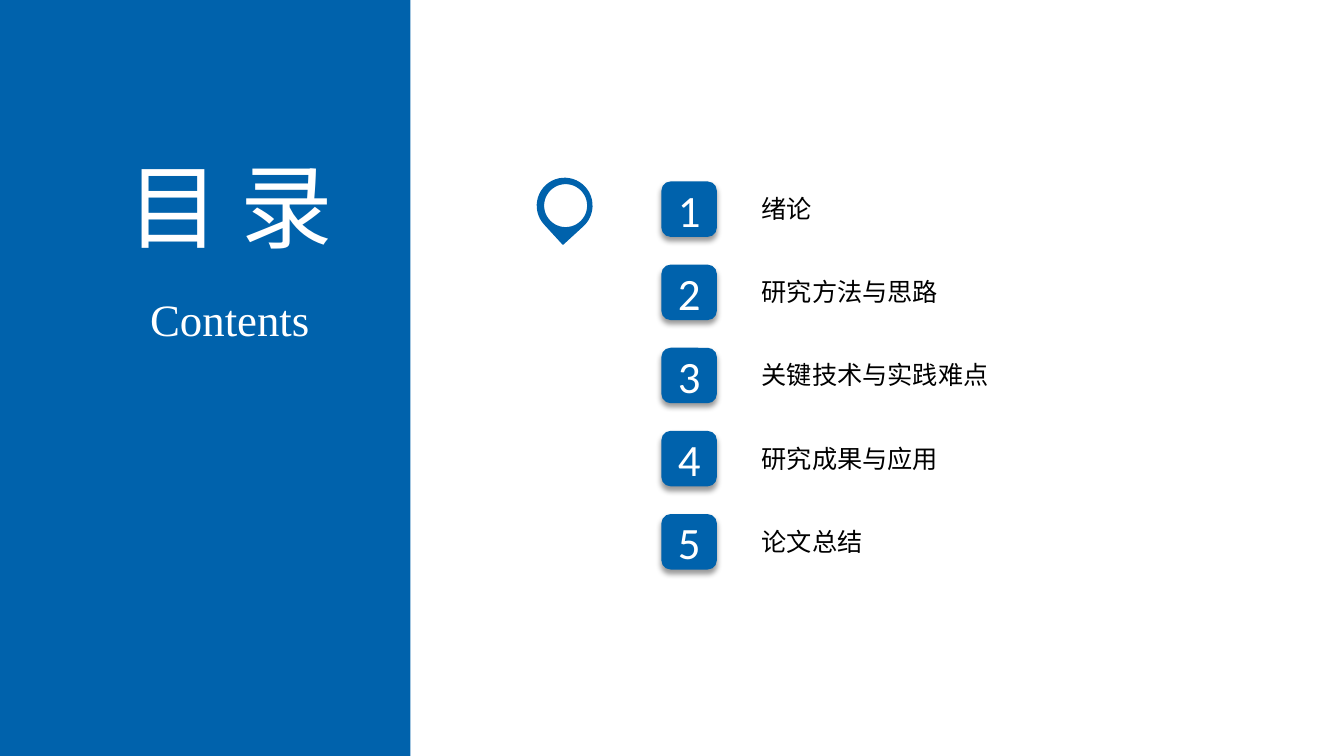
from lxml import etree
from pptx import Presentation
from pptx.dml.color import RGBColor
from pptx.enum.shapes import MSO_SHAPE
from pptx.enum.text import MSO_ANCHOR, MSO_AUTO_SIZE, PP_ALIGN
from pptx.oxml.ns import qn
from pptx.util import Inches, Pt

RECTANGLE = MSO_SHAPE.RECTANGLE
ROUNDED = MSO_SHAPE.ROUNDED_RECTANGLE
TEARDROP = MSO_SHAPE.TEAR
OVAL = MSO_SHAPE.OVAL
CENTER = PP_ALIGN.CENTER
MIDDLE = MSO_ANCHOR.MIDDLE
FIT_SHAPE = MSO_AUTO_SIZE.SHAPE_TO_FIT_TEXT

COLORS = {"blue": "0062AC", "white": "FFFFFF", "black": "000000"}
CHINESE_FONT = "Noto Sans CJK SC"
LATIN_FONT = "Times New Roman"
NUMBER_FONT = "Calibri"
CHAPTERS = ["绪论", "研究方法与思路", "关键技术与实践难点", "研究成果与应用", "论文总结"]


def color(name):
    return RGBColor.from_string(COLORS[name])


def write(text_frame, text, size, font, color_name):
    paragraph = text_frame.paragraphs[0]
    paragraph.alignment = CENTER
    run = paragraph.add_run()
    run.text = text
    run.font.size = Pt(size)
    run.font.name = font
    run.font.color.rgb = color(color_name)
    # East Asian characters take their typeface from a separate element
    etree.SubElement(run.font._element, qn("a:ea"), typeface=font)


def add_label(slide, box, text, size, font, color_name):
    label = slide.shapes.add_textbox(*map(Inches, box))
    label.text_frame.word_wrap = False
    label.text_frame.auto_size = FIT_SHAPE
    write(label.text_frame, text, size, font, color_name)


def add_block(shapes, kind, box, fill, line=None):
    shape = shapes.add_shape(kind, *map(Inches, box))
    shape.shadow.inherit = False
    shape.fill.solid()
    shape.fill.fore_color.rgb = color(fill)
    if line:
        shape.line.color.rgb = color(line)
        shape.line.width = Pt(1)
    else:
        shape.line.fill.background()
    return shape


def add_drop_shadow(shape):
    effects = shape._element.spPr.find(qn("a:effectLst"))
    shadow = etree.SubElement(
        effects, qn("a:outerShdw"), blurRad=str(Pt(4)), dist=str(Pt(3)),
        dir="5400000", algn="t", rotWithShape="0")
    tint = etree.SubElement(shadow, qn("a:srgbClr"), val=COLORS["black"])
    etree.SubElement(tint, qn("a:alpha"), val="40000")


def add_title_panel(slide, left, top, width, height):
    add_block(slide.shapes, RECTANGLE, (left, top, width, height), "blue")
    add_label(slide, (left + 1.02, top + 1.43, 2.52, 1.21),
              "目 录", 66, CHINESE_FONT, "white")
    add_label(slide, (left + 1.38, top + 2.84, 1.8, 0.64),
              "Contents", 32, LATIN_FONT, "white")


def add_chapter_list(slide, left, top, pitch):
    side = 0.55
    for index, chapter in enumerate(CHAPTERS):
        row_top = top + index * pitch
        # Numbered tile
        tile = add_block(slide.shapes, ROUNDED, (left, row_top, side, side), "blue")
        add_drop_shadow(tile)
        tile.text_frame.vertical_anchor = MIDDLE
        write(tile.text_frame, str(index + 1), 32, NUMBER_FONT, "white")
        # Chapter name, one quarter inch per character plus the margins
        label_width = 0.21 + 0.25 * len(chapter)
        add_label(slide, (left + 0.89, row_top + 0.07, label_width, 0.4),
                  chapter, 18, CHINESE_FONT, "black")


def add_marker(slide, left, top, size):
    marker = slide.shapes.add_group_shape()
    pin = add_block(marker.shapes, TEARDROP, (left, top, size, size), "blue", "blue")
    pin.rotation = 137.5
    add_block(marker.shapes, OVAL, (left + 0.06, top + 0.05, size - 0.1, size - 0.1),
              "white", "blue")


def build_contents_slide(presentation):
    slide = presentation.slides.add_slide(presentation.slide_layouts[6])
    add_chapter_list(slide, 6.56, 1.8, 0.825)
    add_title_panel(slide, 0, 0, 4.07, 7.5)
    add_marker(slide, 5.33, 1.77, 0.54)


def main():
    presentation = Presentation()
    presentation.slide_width = Inches(13.33)
    presentation.slide_height = Inches(7.5)
    build_contents_slide(presentation)
    presentation.save("out.pptx")


if __name__ == "__main__":
    main()
